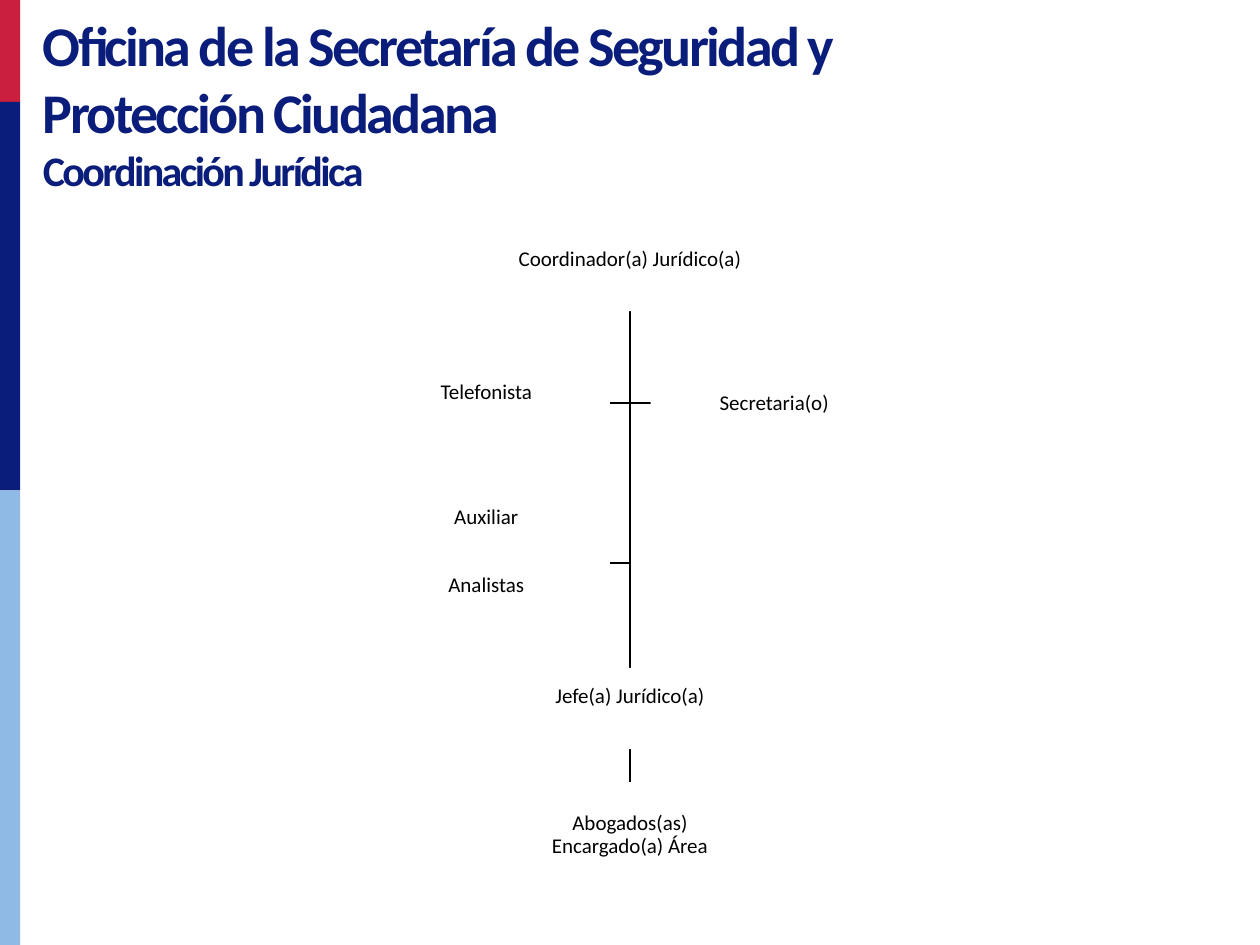
"""Build the organisation chart slide of the Coordinación Jurídica."""
from lxml.etree import SubElement
from pptx import Presentation
from pptx.dml.color import RGBColor
from pptx.enum.shapes import MSO_CONNECTOR, MSO_SHAPE
from pptx.enum.text import MSO_ANCHOR, MSO_AUTO_SIZE, PP_ALIGN
from pptx.oxml.ns import qn
from pptx.util import Inches, Pt

RED = RGBColor(0xCA, 0x1F, 0x3D)
NAVY = RGBColor(0x0A, 0x1D, 0x7A)
SKY = RGBColor(0x8F, 0xBA, 0xE5)
BLACK = RGBColor(0, 0, 0)
WHITE = RGBColor(0xFF, 0xFF, 0xFF)

prs = Presentation()
prs.slide_width, prs.slide_height = Inches(10), Inches(7.5)
s = prs.slides.add_slide(prs.slide_layouts[5])


def share(x, y):
    return round(prs.slide_width * x / 100), round(prs.slide_height * y / 100)


def add_box(left, top, width, height, color):
    sp = s.shapes.add_shape(MSO_SHAPE.RECTANGLE, *share(left, top), *share(width, height))
    sp.shadow.inherit = False
    sp.fill.solid()
    sp.fill.fore_color.rgb = color
    sp.line.fill.background()
    return sp


bar_edges = [0, 10.8, 51.9, 100]
for top, bottom, color in zip(bar_edges, bar_edges[1:], (RED, NAVY, SKY)):
    add_box(0, top, 1.6, bottom - top, color)

title = s.shapes.title
title.left, title.top = share(2.4, 0.4)
title.width, title.height = share(74.6, 21.07)
tf = title.text_frame
tf.word_wrap = True
tf.auto_size = MSO_AUTO_SIZE.NONE
tf.vertical_anchor = MSO_ANCHOR.TOP
tf.text = "Oficina de la Secretaría de Seguridad y Protección Ciudadana\nCoordinación Jurídica"
for p, size in zip(tf.paragraphs, (32, 24)):
    p.alignment = PP_ALIGN.LEFT
    p.font.name, p.font.size, p.font.bold = "Calibri", Pt(size), True
    p.font.color.rgb = NAVY
    for r in p.runs:
        r.font._element.set("spc", "-150")

AXIS, LEFT_EDGE, RIGHT_EDGE, ROOT = 50, 48.4, 51.65, 32.93
for edge, level in ((LEFT_EDGE, 59.6), (RIGHT_EDGE, 42.67), (LEFT_EDGE, 42.67)):
    outline = s.shapes.build_freeform(*share(AXIS, ROOT))
    outline.add_line_segments([share(AXIS, level), share(edge, level)], close=False)
    sp = outline.convert_to_shape()
    sp.shadow.inherit = False
    sp.fill.background()
    sp.line.color.rgb, sp.line.width = BLACK, Pt(1)

for top, bottom in ((79.3, 82.8), (ROOT, 70.67)):
    line = s.shapes.add_connector(MSO_CONNECTOR.STRAIGHT, *share(AXIS, top), *share(AXIS, bottom))
    line.line.color.rgb, line.line.width = BLACK, Pt(1)
    SubElement(line._element.spPr, qn("a:effectLst"))

posts = [
    ("Coordinador(a) Jurídico(a)", 39, 22.13, 22, 10.8, 0, 0),
    ("Jefe(a) Jurídico(a)", 39.65, 70.67, 20.7, 8.6, 1, 0),
    ("Abogados(as)\nEncargado(a) Área", 39.65, 82.8, 20.7, 13.6, 1, 0),
    ("Telefonista", 28.8, 37.33, 19.6, 10.8, 1, 0),
    ("Secretaria(o)", RIGHT_EDGE, 37.33, 19.6, 10.8, 0, 0),
    ("Auxiliar\nAnalistas", 28.8, 51.47, 19.6, 16.27, 1, 2),
]
LINE_HEIGHT = Pt(13.2)
for text, left, top, width, height, lines_below, lines_between in posts:
    tf = add_box(left, top, width, height, WHITE).text_frame
    tf.word_wrap = True
    tf.vertical_anchor = MSO_ANCHOR.MIDDLE
    tf.margin_left = tf.margin_right = tf.margin_top = Inches(0.01)
    tf.margin_bottom = Inches(0.01) + lines_below * LINE_HEIGHT
    tf.text = text
    for i, p in enumerate(tf.paragraphs):
        p.alignment = PP_ALIGN.CENTER
        p.line_spacing = 0.9
        if i and lines_between:
            p.space_before = lines_between * LINE_HEIGHT
        p.font.name, p.font.size = "Calibri", Pt(12)
        p.font.color.rgb = BLACK

prs.save("out.pptx")
